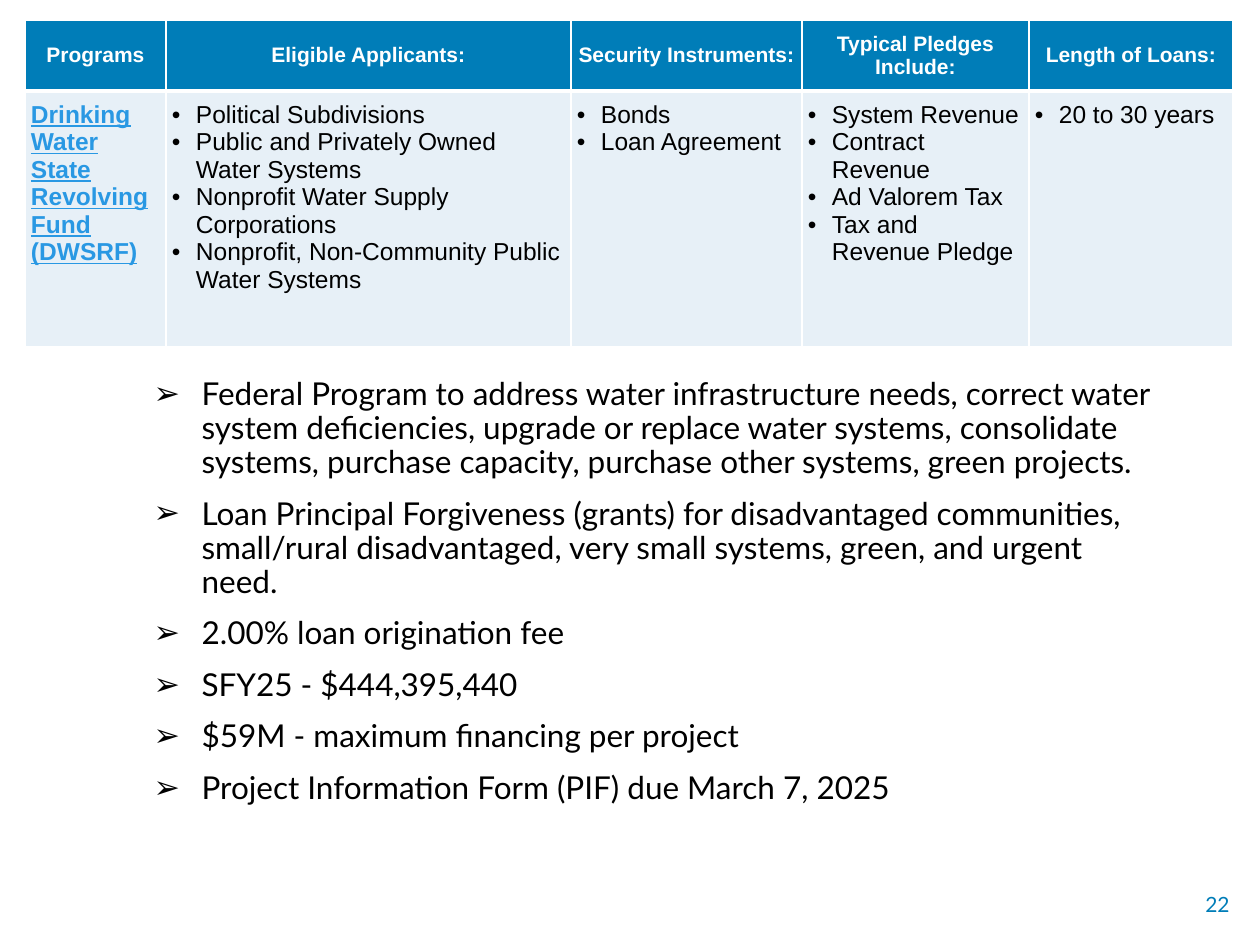
from pptx import Presentation, util as u
from pptx.dml.color import RGBColor
from pptx.enum import text
from pptx.oxml import parse_xml
from pptx.oxml.ns import nsdecls

THEME = {
    "blue": RGBColor.from_string("007DB8"),
    "pale": RGBColor.from_string("E7F0F7"),
    "link": RGBColor.from_string("2998E3"),
    "white": RGBColor.from_string("FFFFFF"),
    "black": RGBColor.from_string("000000"),
    "table_font": "Arial", "body_font": "Lato",
    "header_size": 12, "cell_size": 14, "body_size": 18, "number_size": 12,
}
PX = 914400 / 126  # EMU per pixel


def px(*lengths):
    return [u.Emu(round(n * PX)) for n in lengths]


def write(paragraph, words, font, size, color, bullet=None, indent=0):
    """Add one run to a paragraph, with an optional hanging bullet."""
    if bullet:
        props = paragraph._p.get_or_add_pPr()
        hang = px(indent)[0]
        props.set("marL", str(hang))
        props.set("indent", str(-hang))
        props.append(parse_xml(f'<a:buFont {nsdecls("a")} typeface="Arial"/>'))
        props.append(parse_xml(f'<a:buChar {nsdecls("a")} char="{bullet}"/>'))
    run = paragraph.add_run()
    run.text = words
    run.font.name = THEME[font]
    run.font.size = u.Pt(THEME[size])
    run.font.color.rgb = THEME[color]
    return run


prs = Presentation()
prs.slide_width, prs.slide_height = px(1260, 945)
slide = prs.slides.add_slide(prs.slide_layouts[1])
title = slide.shapes.title
title._element.getparent().remove(title._element)

# Program details
details = slide.placeholders[1]
details.left, details.top, details.width, details.height = px(141, 372, 1026, 496)
frame = details.text_frame
frame.word_wrap = True
frame.auto_size = text.MSO_AUTO_SIZE.NONE
frame.vertical_anchor = text.MSO_ANCHOR.TOP
points = [
    "Federal Program to address water infrastructure needs, correct water "
    "system deficiencies, upgrade or replace water systems, consolidate "
    "systems, purchase capacity, purchase other systems, green projects.",
    "Loan Principal Forgiveness (grants) for disadvantaged communities, "
    "small/rural disadvantaged, very small systems, green, and urgent need.",
    "2.00% loan origination fee",
    "SFY25 - $444,395,440",
    "$59M - maximum financing per project",
    "Project Information Form (PIF) due March 7, 2025",
]
for i, point in enumerate(points):
    line = frame.add_paragraph() if i else frame.paragraphs[0]
    line.line_spacing = 0.9
    line.space_before = u.Pt(10 if i else 0)
    write(line, point, "body_font", "body_size", "black", "➢", 48)

# Loan terms table: heading, column width, entries
columns = [
    ("Programs", 141, ["Drinking Water State Revolving Fund (DWSRF)"]),
    ("Eligible Applicants:", 405, [
        "Political Subdivisions",
        "Public and Privately Owned Water Systems",
        "Nonprofit Water Supply Corporations",
        "Nonprofit, Non-Community Public Water Systems"]),
    ("Security Instruments:", 231, ["Bonds", "Loan Agreement"]),
    ("Typical Pledges Include:", 227, [
        "System Revenue", "Contract Revenue", "Ad Valorem Tax",
        "Tax and Revenue Pledge"]),
    ("Length of Loans:", 204, ["20 to 30 years"]),
]
terms = slide.shapes.add_table(2, len(columns), *px(25, 20, 1208, 327)).table
terms.rows[0].height, terms.rows[1].height = px(71, 256)

for c, (heading, width, entries) in enumerate(columns):
    terms.columns[c].width = px(width)[0]
    for r, fill in enumerate(("blue", "pale")):
        cell = terms.cell(r, c)
        cell.margin_left, cell.margin_right = px(6, 6)
        cell.margin_top, cell.margin_bottom = px(10, 10)
        # White rules, heavier between heading and entries
        heavy = "B" if r == 0 else "T"
        for side in "LRTB":
            weight = u.Pt(3 if side == heavy else 1)
            cell._tc.get_or_add_tcPr().append(parse_xml(
                f'<a:ln{side} {nsdecls("a")} w="{weight}"><a:solidFill>'
                f'<a:srgbClr val="{THEME["white"]}"/></a:solidFill></a:ln{side}>'))
        cell.fill.solid()
        cell.fill.fore_color.rgb = THEME[fill]

    top, below = terms.cell(0, c), terms.cell(1, c)
    top.vertical_anchor = text.MSO_ANCHOR.MIDDLE
    label = top.text_frame.paragraphs[0]
    label.alignment = text.PP_ALIGN.CENTER
    write(label, heading, "table_font", "header_size", "white").font.bold = True

    for i, entry in enumerate(entries):
        item = below.text_frame.add_paragraph() if i else below.text_frame.paragraphs[0]
        if c == 0:
            program = write(item, entry, "table_font", "cell_size", "link")
            program.font.bold = program.font.underline = True
        else:
            run = write(item, entry, "table_font", "cell_size", "black", "•", 24)
            run.font.bold = False

# Page number
page = slide.shapes.add_textbox(*px(985, 882, 257, 44)).text_frame
page.word_wrap = True
page.vertical_anchor = text.MSO_ANCHOR.MIDDLE
page.paragraphs[0].alignment = text.PP_ALIGN.RIGHT
write(page.paragraphs[0], "22", "body_font", "number_size", "blue")

prs.save("out.pptx")
